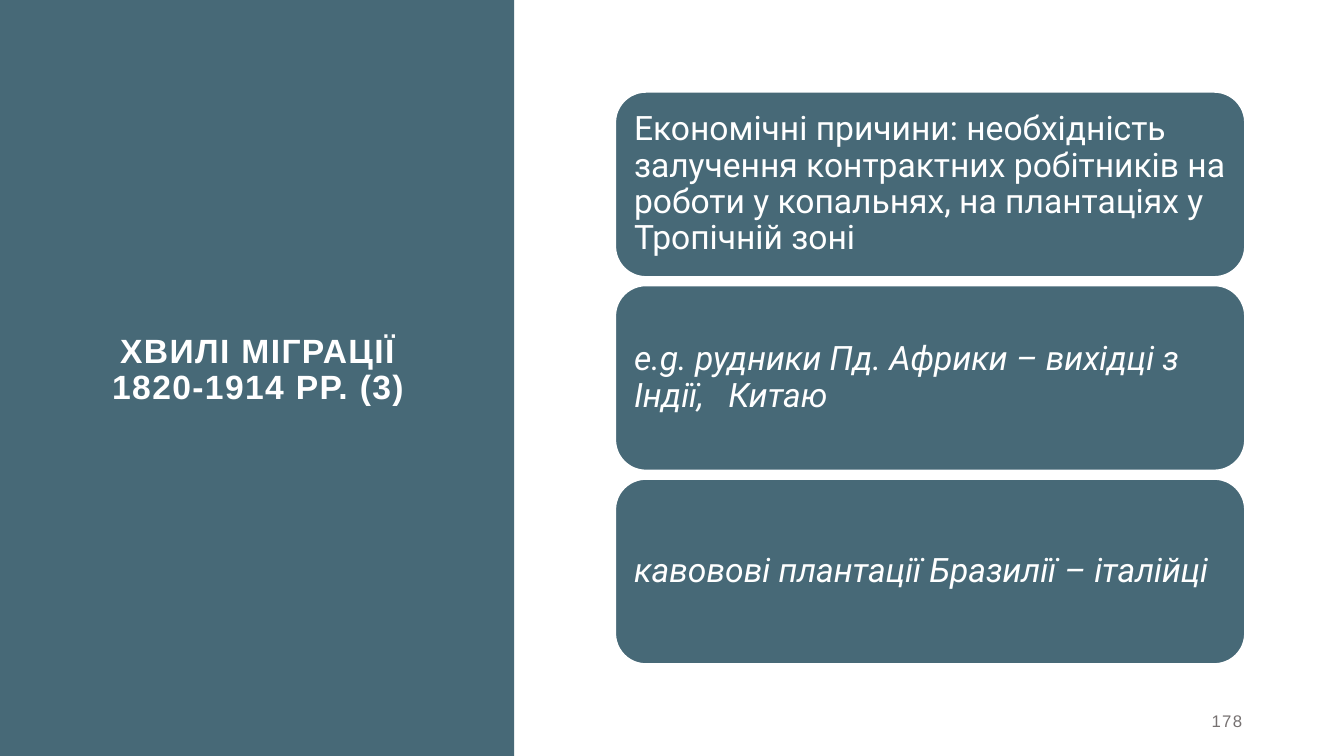
from dataclasses import dataclass

from pptx import Presentation
from pptx.dml.color import RGBColor
from pptx.enum.shapes import MSO_SHAPE
from pptx.enum.text import MSO_ANCHOR, PP_ALIGN
from pptx.shapes.autoshape import Shape
from pptx.slide import Slide
from pptx.util import Inches, Pt

WIDE, HIGH = Inches(13.33), Inches(7.5)
HUES = {"teal": "476977", "white": "FFFFFF", "gray": "767171"}
CARD_LEFT, CARD_WIDE = 6.1 / 13.33, 6.25 / 13.33
CARD_TOP, CARD_HIGH, CARD_STEP = 0.91 / 7.5, 1.84 / 7.5, 1.92 / 7.5


@dataclass(frozen=True)
class Area:
    left: float
    top: float
    width: float
    height: float

    def box(self) -> tuple[int, int, int, int]:
        return (round(self.left * WIDE), round(self.top * HIGH),
                round(self.width * WIDE), round(self.height * HIGH))


@dataclass(frozen=True)
class Style:
    font: str
    size: int
    hue: str
    align: PP_ALIGN
    bold: bool = False
    slant: bool = False
    track: int = 0
    lead: float = 1.0
    inset: float = 0.1


@dataclass(frozen=True)
class Card:
    text: str
    slant: bool


TITLE = Style("Arial", 24, "white", PP_ALIGN.CENTER, bold=True, track=100, lead=0.9)
NUMBER = Style("Arial", 12, "gray", PP_ALIGN.RIGHT, track=100)
CARDS = [
    Card("Економічні причини: необхідність залучення контрактних робітників "
         "на роботи у копальнях, на плантаціях у Тропічній зоні", False),
    Card("e.g. рудники Пд. Африки – вихідці з Індії,   Китаю", True),
    Card("кавовові плантації Бразилії – італійці", True),
]


def tint(name: str) -> RGBColor:
    return RGBColor.from_string(HUES[name])


def write(shape: Shape, text: str, style: Style) -> None:
    frame = shape.text_frame
    frame.word_wrap = True
    frame.vertical_anchor = MSO_ANCHOR.MIDDLE
    frame.margin_left = frame.margin_right = Inches(0.1)
    frame.margin_top = frame.margin_bottom = Inches(style.inset)
    para = frame.paragraphs[0]
    para.alignment = style.align
    para.line_spacing = style.lead
    run = para.add_run()
    run.text = text
    if style.track:
        run.font._element.set("spc", str(style.track))
    font = para.font
    font.name = style.font
    font.size = Pt(style.size)
    font.bold = style.bold
    font.italic = style.slant
    font.color.rgb = tint(style.hue)


def block(slide: Slide, kind: MSO_SHAPE, area: Area) -> Shape:
    shape = slide.shapes.add_shape(kind, *area.box())
    shape.shadow.inherit = False
    shape.fill.solid()
    shape.fill.fore_color.rgb = tint("teal")
    shape.line.fill.background()
    return shape


def label(slide: Slide, area: Area, text: str, style: Style) -> None:
    write(slide.shapes.add_textbox(*area.box()), text, style)


def stack(slide: Slide, cards: list[Card]) -> None:
    for row, card in enumerate(cards):
        area = Area(CARD_LEFT, CARD_TOP + row * CARD_STEP, CARD_WIDE, CARD_HIGH)
        shape = block(slide, MSO_SHAPE.ROUNDED_RECTANGLE, area)
        shape.line.color.rgb = tint("white")
        shape.line.width = Pt(1.5)
        style = Style("Roboto", 24, "white", PP_ALIGN.LEFT, slant=card.slant, lead=0.9)
        write(shape, card.text, style)


def main() -> None:
    deck = Presentation()
    deck.slide_width, deck.slide_height = WIDE, HIGH
    slide = deck.slides.add_slide(deck.slide_layouts[6])
    block(slide, MSO_SHAPE.RECTANGLE, Area(0, 0, 5.1 / 13.33, 1))
    label(slide, Area(0.7 / 13.33, 0.88 / 7.5, 3.72 / 13.33, 5.6 / 7.5),
          "ХВИЛІ МІГРАЦІЇ 1820-1914 РР. (3)", TITLE)
    stack(slide, CARDS)
    label(slide, Area(9.42 / 13.33, 6.95 / 7.5, 3 / 13.33, 0.4 / 7.5), "178", NUMBER)
    deck.save("out.pptx")


if __name__ == "__main__":
    main()
